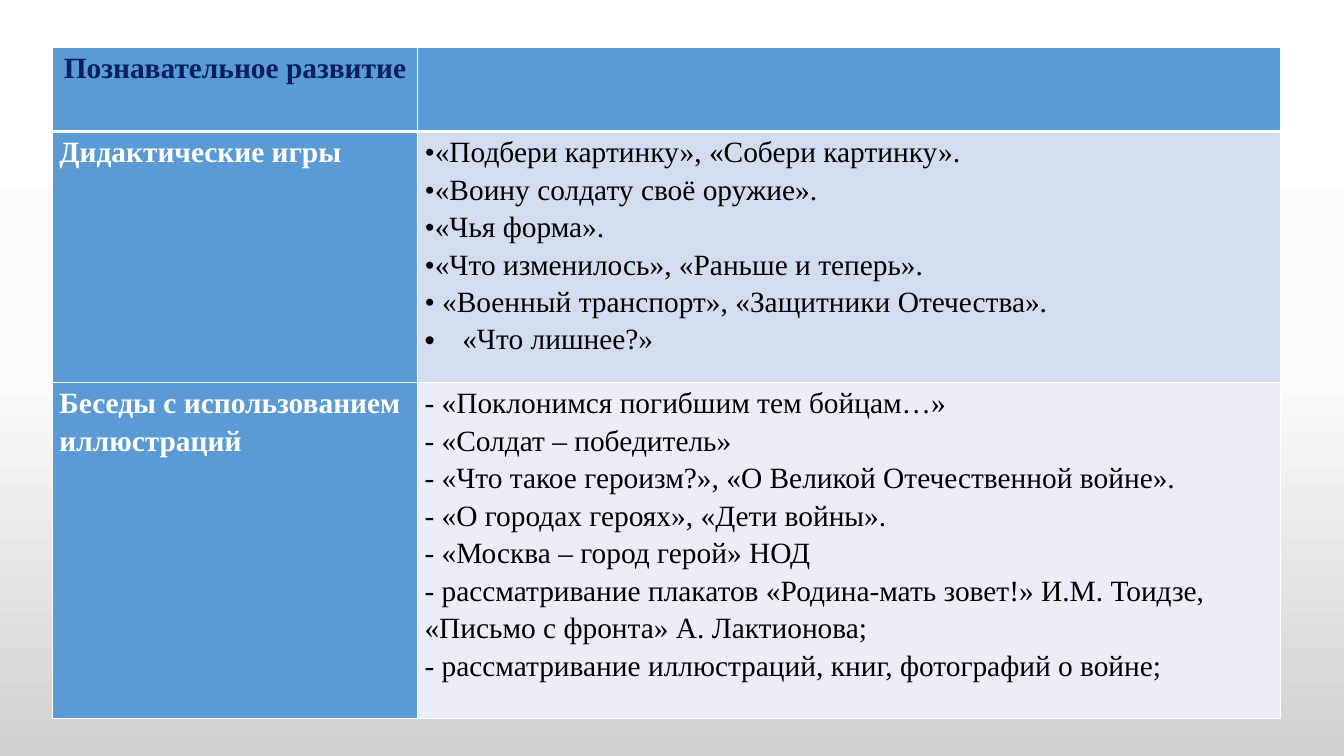
import copy
from dataclasses import dataclass

import lxml.etree
import pptx
import pptx.dml.color
import pptx.enum.text
import pptx.oxml.ns
import pptx.util

Pt = pptx.util.Pt
qn = pptx.oxml.ns.qn
Align = pptx.enum.text.PP_ALIGN


@dataclass(frozen=True)
class Theme:
    font: str = "Times New Roman"
    size: float = 21
    line_spacing: float = 1.15
    navy: str = "002060"
    white: str = "FFFFFF"
    black: str = "000000"
    blue: str = "5B9BD5"
    band_dark: str = "D2DEEF"
    band_light: str = "EAEFF7"
    thin: float = 1
    thick: float = 3
    background: tuple = ((0, "FFFFFF"), (0.5, "FBFBFB"), (1, "D1D1D1"))


THEME = Theme()

GAMES = (
    "•«Подбери картинку», «Собери картинку».",
    "•«Воину солдату своё оружие».",
    "•«Чья форма».",
    "•«Что изменилось», «Раньше и теперь». ",
    "• «Военный транспорт», «Защитники Отечества».",
)
LAST_GAME = "«Что лишнее?»"
TALKS = (
    "- «Поклонимся погибшим тем бойцам…»",
    "- «Солдат – победитель»",
    "- «Что такое героизм?», «О Великой Отечественной войне».",
    "- «О городах героях», «Дети войны».",
    "- «Москва – город герой» НОД",
    "- рассматривание плакатов «Родина-мать зовет!» И.М. Тоидзе, «Письмо с фронта» А. Лактионова;",
    "- рассматривание иллюстраций, книг, фотографий о войне;",
)


def rgb(value):
    return pptx.dml.color.RGBColor.from_string(value)


def apply_format(target, values):
    for name, value in values.items():
        setattr(target, name, value)


def paint_background(slide):
    fill = slide.background.fill
    fill.gradient()
    fill.gradient_angle = 270
    stop_list = next(slide.element.iter(qn("a:gsLst")))
    while len(stop_list) < len(THEME.background):
        stop_list.append(copy.deepcopy(stop_list[0]))
    for stop, (position, color) in zip(fill.gradient_stops, THEME.background):
        stop.position = position
        stop.color.rgb = rgb(color)


def add_borders(cell, widths):
    properties = cell._tc.get_or_add_tcPr()
    for side, width in widths.items():
        line = lxml.etree.SubElement(properties, qn(f"a:ln{side}"), w=str(Pt(width)))
        solid = lxml.etree.SubElement(line, qn("a:solidFill"))
        lxml.etree.SubElement(solid, qn("a:srgbClr"), val=THEME.white)


def write_paragraph(paragraph, text, color, bold, alignment=Align.LEFT):
    paragraph.text = text
    apply_format(paragraph, {"alignment": alignment, "line_spacing": THEME.line_spacing})
    for run in paragraph.runs:
        apply_format(run.font, {"name": THEME.font, "size": Pt(THEME.size), "bold": bold})
        run.font.color.rgb = rgb(color)


def add_bullet(paragraph, indent):
    properties = paragraph._p.get_or_add_pPr()
    properties.set("marL", str(Pt(indent)))
    properties.set("indent", str(-Pt(indent)))
    lxml.etree.SubElement(properties, qn("a:buFont"), typeface="Arial")
    lxml.etree.SubElement(properties, qn("a:buChar"), char="•")


def add_activity_table(slide, left, top, width, height):
    label_width = 260.75
    header_height, games_height = 60, 179.5
    column_widths = (label_width, width - label_width)
    row_heights = (header_height, games_height, height - header_height - games_height)
    row_fills = (
        (THEME.blue, THEME.blue),
        (THEME.blue, THEME.band_dark),
        (THEME.blue, THEME.band_light),
    )
    table = slide.shapes.add_table(3, 2, Pt(left), Pt(top), Pt(width), Pt(height)).table
    for column, column_width in zip(table.columns, column_widths):
        column.width = Pt(column_width)
    margins = {"margin_left": Pt(5), "margin_right": Pt(5), "margin_top": 0, "margin_bottom": 0}
    for index, (row, row_height, fills) in enumerate(zip(table.rows, row_heights, row_fills)):
        row.height = Pt(row_height)
        borders = {
            "L": THEME.thin,
            "R": THEME.thin,
            "T": THEME.thick if index == 1 else THEME.thin,
            "B": THEME.thick if index == 0 else THEME.thin,
        }
        for cell, color in zip(row.cells, fills):
            apply_format(cell, margins)
            add_borders(cell, borders)
            cell.fill.solid()
            cell.fill.fore_color.rgb = rgb(color)

    contents = (
        (0, 0, "Познавательное развитие", THEME.navy, True, Align.CENTER),
        (1, 0, "Дидактические игры", THEME.white, True, Align.JUSTIFY),
        (1, 1, "\v".join(GAMES), THEME.black, False, Align.LEFT),
        (2, 0, "Беседы с использованием  иллюстраций", THEME.white, True, Align.LEFT),
        (2, 1, "\v".join(TALKS), THEME.black, False, Align.LEFT),
    )
    for row, column, *content in contents:
        write_paragraph(table.cell(row, column).text_frame.paragraphs[0], *content)
    last_game = table.cell(1, 1).text_frame.add_paragraph()
    write_paragraph(last_game, LAST_GAME, THEME.black, False)
    add_bullet(last_game, 27)


def main():
    presentation = pptx.Presentation()
    apply_format(presentation, {"slide_width": Pt(960), "slide_height": Pt(540)})
    slide = presentation.slides.add_slide(presentation.slide_layouts[6])
    paint_background(slide)
    add_activity_table(slide, 37.5, 34, 877, 479)
    presentation.save("out.pptx")


if __name__ == "__main__":
    main()
